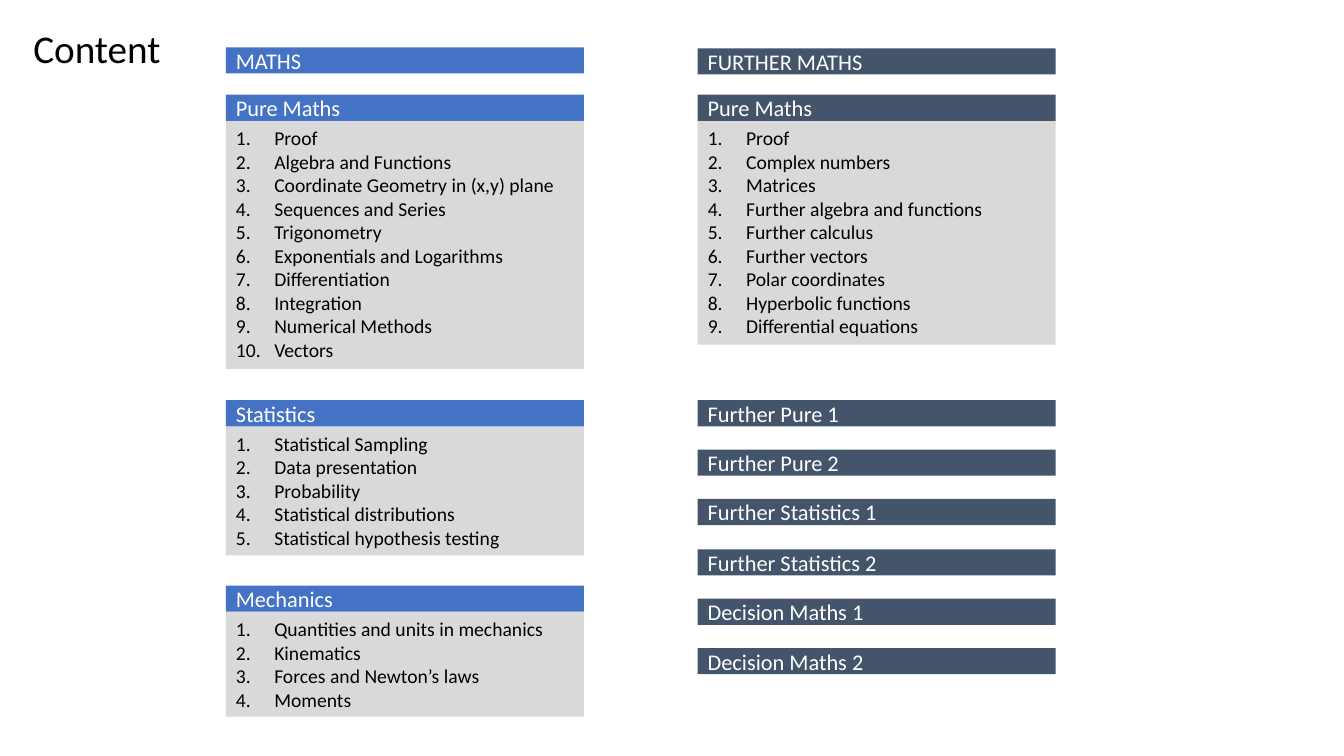
import pptx
import pptx.util
import pptx.dml.color
import pptx.enum.shapes
import pptx.enum.text
import lxml.etree

PX = 9144
BLUE = pptx.dml.color.RGBColor(0x44, 0x72, 0xC4)
SLATE = pptx.dml.color.RGBColor(0x44, 0x54, 0x6A)
GREY = pptx.dml.color.RGBColor(0xD9, 0xD9, 0xD9)
BLACK = pptx.dml.color.RGBColor(0, 0, 0)
WHITE = pptx.dml.color.RGBColor(0xFF, 0xFF, 0xFF)
TOP = pptx.enum.text.MSO_ANCHOR.TOP
MIDDLE = pptx.enum.text.MSO_ANCHOR.MIDDLE
MATHS_LEFT, FURTHER_LEFT = 224, 692
WIDTH, BAR_HEIGHT = 355, 26
DRAWING = "http://schemas.openxmlformats.org/drawingml/2006/main"

presentation = pptx.Presentation()
presentation.slide_width = 1333 * PX
presentation.slide_height = 750 * PX
slide = presentation.slides.add_slide(presentation.slide_layouts[4])
title, *bodies = slide.placeholders


def place(shape, left, top, width, height):
    box = {"left": left, "top": top, "width": width, "height": height}
    for name, value in box.items():
        setattr(shape, name, value * PX)


def write(shape, text, size, color, anchor):
    frame = shape.text_frame
    frame.text = text
    frame_format = {
        "word_wrap": True,
        "auto_size": pptx.enum.text.MSO_AUTO_SIZE.NONE,
        "vertical_anchor": anchor,
        "margin_left": 10 * PX,
        "margin_right": 10 * PX,
        "margin_top": 5 * PX,
        "margin_bottom": 5 * PX,
    }
    for name, value in frame_format.items():
        setattr(frame, name, value)
    paragraph_format = {
        "alignment": pptx.enum.text.PP_ALIGN.LEFT,
        "line_spacing": 1.0,
        "space_before": pptx.util.Pt(0),
        "space_after": pptx.util.Pt(0),
    }
    for paragraph in frame.paragraphs:
        for name, value in paragraph_format.items():
            setattr(paragraph, name, value)
        font = paragraph.runs[0].font
        font_format = {"name": "Calibri", "size": pptx.util.Pt(size), "bold": False}
        for name, value in font_format.items():
            setattr(font, name, value)
        font.color.rgb = color


place(title, 23, 19, 1058, 57)
write(title, "Content", 28, BLACK, TOP)

sections = [
    (MATHS_LEFT, 94, BLUE, "Pure Maths", [
        "Proof", "Algebra and Functions", "Coordinate Geometry in (x,y) plane",
        "Sequences and Series", "Trigonometry", "Exponentials and Logarithms",
        "Differentiation", "Integration", "Numerical Methods", "Vectors"]),
    (MATHS_LEFT, 397, BLUE, "Statistics", [
        "Statistical Sampling", "Data presentation", "Probability",
        "Statistical distributions", "Statistical hypothesis testing"]),
    (MATHS_LEFT, 581, BLUE, "Mechanics", [
        "Quantities and units in mechanics", "Kinematics",
        "Forces and Newton’s laws", "Moments"]),
    (FURTHER_LEFT, 94, SLATE, "Pure Maths", [
        "Proof", "Complex numbers", "Matrices", "Further algebra and functions",
        "Further calculus", "Further vectors", "Polar coordinates",
        "Hyperbolic functions", "Differential equations"]),
]

for body, (left, top, color, heading, topics) in zip(bodies, sections):
    place(body, left, top + BAR_HEIGHT, WIDTH, round(23.6 * len(topics) + 10))
    body.fill.solid()
    body.fill.fore_color.rgb = GREY
    write(body, "\n".join(topics), 14, BLACK, TOP)
    for paragraph in body.text_frame.paragraphs:
        properties = paragraph._p.get_or_add_pPr()
        properties.set("marL", str(38 * PX))
        properties.set("indent", str(-38 * PX))
        lxml.etree.SubElement(properties, f"{{{DRAWING}}}buFont", typeface="Calibri")
        lxml.etree.SubElement(properties, f"{{{DRAWING}}}buAutoNum", type="arabicPeriod")

bars = [(left, top, color, heading) for left, top, color, heading, topics in sections]
bars += [(MATHS_LEFT, 47, BLUE, "MATHS"), (FURTHER_LEFT, 48, SLATE, "FURTHER MATHS")]
options = ["Further Pure 1", "Further Pure 2", "Further Statistics 1",
           "Further Statistics 2", "Decision Maths 1", "Decision Maths 2"]
for index, option in enumerate(options):
    bars.append((FURTHER_LEFT, round(397 + 49.2 * index), SLATE, option))

for left, top, color, heading in bars:
    bar = slide.shapes.add_shape(pptx.enum.shapes.MSO_SHAPE.RECTANGLE, 0, 0, 0, 0)
    place(bar, left, top, WIDTH, BAR_HEIGHT)
    bar.shadow.inherit = False
    bar.fill.solid()
    bar.fill.fore_color.rgb = color
    bar.line.fill.background()
    write(bar, heading, 16, WHITE, MIDDLE)

presentation.save("out.pptx")
